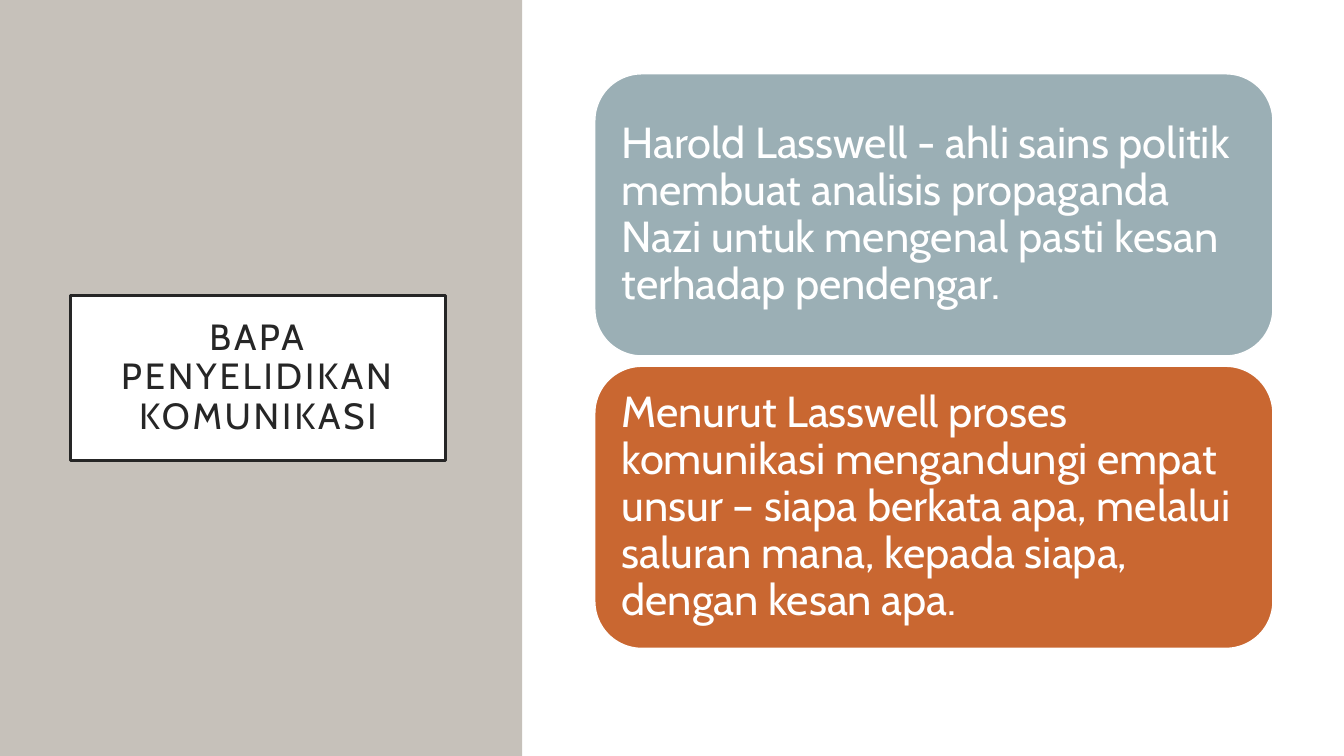
from dataclasses import dataclass

from pptx import Presentation
from pptx.dml.color import RGBColor
from pptx.enum.shapes import MSO_SHAPE
from pptx.enum.text import MSO_ANCHOR, MSO_AUTO_SIZE, PP_ALIGN
from pptx.util import Cm, Pt

RECTANGLE = MSO_SHAPE.RECTANGLE
ROUNDED = MSO_SHAPE.ROUNDED_RECTANGLE
MIDDLE = MSO_ANCHOR.MIDDLE
NO_AUTOFIT = MSO_AUTO_SIZE.NONE
LEFT, CENTER = PP_ALIGN.LEFT, PP_ALIGN.CENTER
TITLE_ONLY = 5


@dataclass(frozen=True)
class Theme:
    font: str = "Cabin"
    white: RGBColor = RGBColor(0xFF, 0xFF, 0xFF)
    ink: RGBColor = RGBColor(0x26, 0x26, 0x26)
    stone: RGBColor = RGBColor(0xC6, 0xC1, 0xBA)
    slate: RGBColor = RGBColor(0x9B, 0xAF, 0xB5)
    rust: RGBColor = RGBColor(0xC9, 0x67, 0x31)
    title_size: Pt = Pt(26)
    card_size: Pt = Pt(31)


THEME = Theme()


def add_block(page, kind, left, top, width, height, fill):
    block = page.shapes.add_shape(kind, Cm(left), Cm(top), Cm(width), Cm(height))
    block.shadow.inherit = False
    block.fill.solid()
    block.fill.fore_color.rgb = fill
    block.line.fill.background()
    return block


def write_text(box, text, size, color, align, inset):
    frame = box.text_frame
    frame.word_wrap = True
    frame.auto_size = NO_AUTOFIT
    frame.vertical_anchor = MIDDLE
    frame.margin_left = frame.margin_right = Cm(inset)
    frame.margin_top = frame.margin_bottom = Cm(inset)
    para = frame.paragraphs[0]
    para.alignment = align
    para.line_spacing = 0.9
    span = para.add_run()
    span.text = text
    span.font.name = THEME.font
    span.font.size = size
    span.font.color.rgb = color
    return span


deck = Presentation()
deck.slide_width, deck.slide_height = Cm(33.87), Cm(19.05)
page = deck.slides.add_slide(deck.slide_layouts[TITLE_ONLY])

# Side panel and content panel
add_block(page, RECTANGLE, 0, 0, 13.16, 19.05, THEME.stone)
add_block(page, RECTANGLE, 13.21, 0, 20.66, 19.05, THEME.white)

# Framed title, raised above the panels
title = page.shapes.title
title.element.getparent().append(title.element)
title.left, title.top, title.width, title.height = Cm(1.78), Cm(7.44), Cm(9.45), Cm(4.17)
title.fill.solid()
title.fill.fore_color.rgb = THEME.white
title.line.color.rgb = THEME.ink
title.line.width = Pt(2.5)
heading = write_text(title, "BAPA PENYELIDIKAN KOMUNIKASI",
                     THEME.title_size, THEME.ink, CENTER, 0.51)
heading.font._element.set("spc", "200")  # letter spacing of 2 pt

# Stacked cards
cards = [
    (THEME.slate, "Harold Lasswell - ahli sains politik membuat analisis propaganda "
                  "Nazi untuk mengenal pasti kesan terhadap pendengar."),
    (THEME.rust, "Menurut Lasswell proses komunikasi mengandungi empat unsur – siapa "
                 "berkata apa, melalui saluran mana, kepada siapa, dengan kesan apa."),
]
for index, (fill, text) in enumerate(cards):
    card = add_block(page, ROUNDED, 14.99, 1.86 + index * 7.37, 17.09, 7.11, fill)
    card.line.color.rgb = THEME.white
    card.line.width = Pt(1)
    write_text(card, text, THEME.card_size, THEME.white, LEFT, 0.33)

deck.save("out.pptx")
